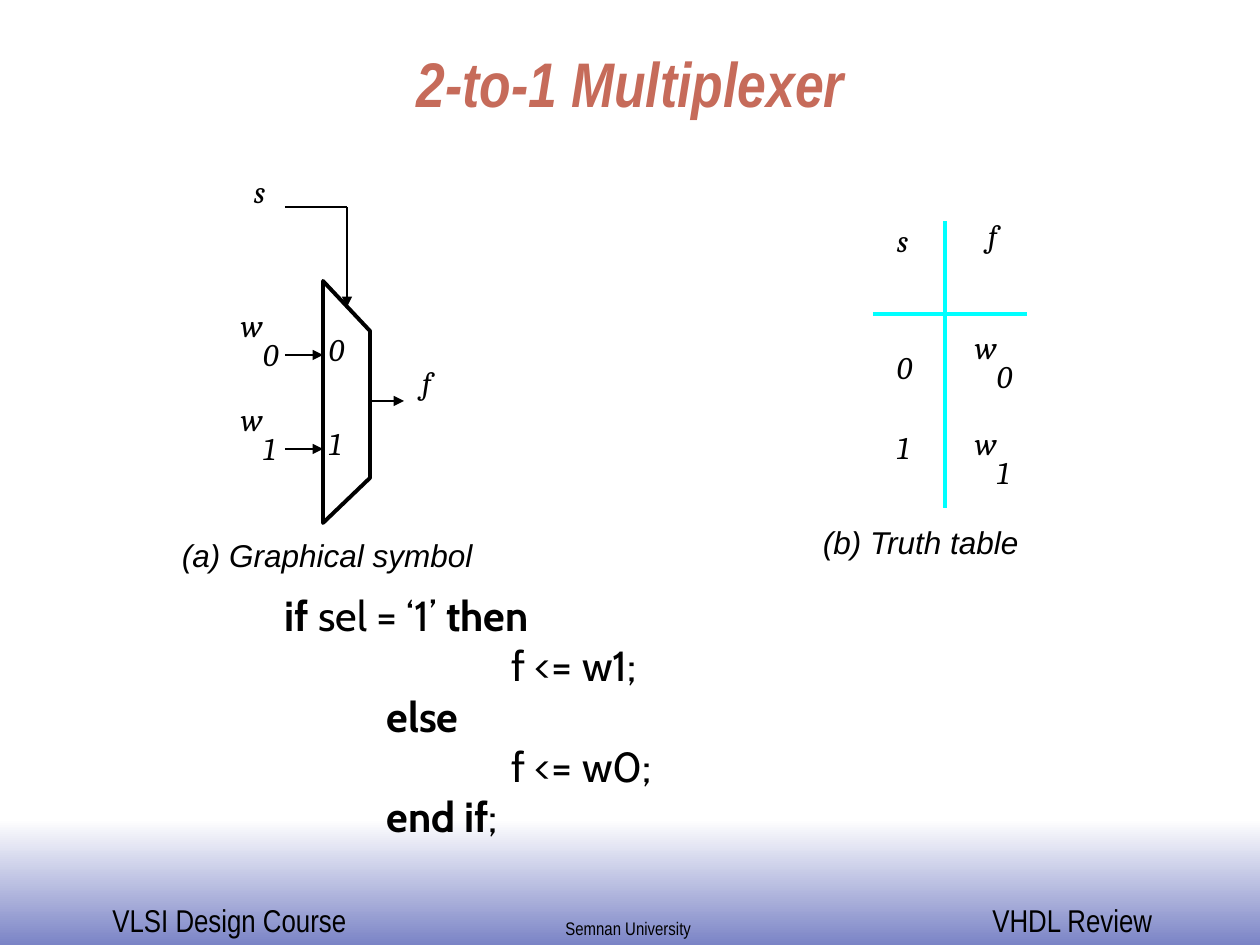
import pptx
import pptx.util
import pptx.dml.color
import pptx.enum.shapes
import pptx.enum.text
import pptx.oxml
import pptx.oxml.ns

SCALE = 914400 / 126  # EMU per px
WIDTHS = {"w": 23, "s": 15, "f": 9, "0": 18, "1": 18}
BLACK, CYAN = "000000", "00FFFF"


def px(n):
    return round(n * SCALE)


def color(code):
    return pptx.dml.color.RGBColor.from_string(code)


def style(run, size, face, code=BLACK, bold=False, italic=False):
    font = run.font
    font.size, font.name = pptx.util.Pt(size), face
    font.bold, font.italic = bold, italic
    font.color.rgb = color(code)


def add_box(slide, x, y, w, h, inset=0, wrap=False):
    box = slide.shapes.add_textbox(px(x), px(y), px(w), px(h))
    frame = box.text_frame
    frame.word_wrap = wrap
    frame.auto_size = pptx.enum.text.MSO_AUTO_SIZE.SHAPE_TO_FIT_TEXT
    frame.margin_left = frame.margin_right = px(inset)
    frame.margin_top = frame.margin_bottom = px(inset / 2)
    return frame


def add_label(slide, text, x, y, w, face, italic=True, inset=0, wrap=False, h=38):
    frame = add_box(slide, x, y, w, h, inset, wrap)
    frame.text = text
    run = frame.paragraphs[0].runs[0]
    style(run, 18, face, italic=italic)
    return run


def add_sign(slide, sign, x, y):
    add_label(slide, sign, x, y, WIDTHS[sign], "Cambria")


def add_input(slide, digit, x, y):
    """The letter w with a lowered digit."""
    add_sign(slide, "w", x, y)
    add_sign(slide, digit, x + 22, y + 29)


def add_line(slide, x1, y1, x2, y2, code=BLACK, width=1.5, arrow=False):
    line = slide.shapes.add_connector(
        pptx.enum.shapes.MSO_CONNECTOR.STRAIGHT, px(x1), px(y1), px(x2), px(y2))
    line.line.color.rgb = color(code)
    line.line.width = pptx.util.Pt(width)
    if arrow:
        tail = pptx.oxml.parse_xml(
            '<a:tailEnd %s type="triangle"/>' % pptx.oxml.ns.nsdecls("a"))
        line.line._get_or_add_ln().append(tail)
    line._element.spPr.append(
        pptx.oxml.parse_xml("<a:effectLst %s/>" % pptx.oxml.ns.nsdecls("a")))


def add_footer(slide):
    band = slide.shapes.add_shape(
        pptx.enum.shapes.MSO_SHAPE.RECTANGLE, 0, px(819), px(1260), px(126))
    band.shadow.inherit = False
    band.line.fill.background()
    band.fill.gradient()
    band.fill.gradient_angle = 270
    for stop, place, code in zip(band.fill.gradient_stops, (0, 1), ("FFFFFF", "7B84C6")):
        stop.position = place
        stop.color.rgb = color(code)
    face = "Arial Narrow"
    add_label(slide, "VLSI Design Course", 100, 895, 260, face, False, 12.6, h=50)
    add_label(slide, "VHDL Review", 980, 895, 186, face, False, 12.6, h=50)
    school = add_label(slide, "Semnan University", 553, 907, 170, face, False, 12.6)
    school._r.get_or_add_rPr().set("baseline", "30000")


def add_title(slide, text):
    title = slide.shapes.title
    title.left, title.top, title.width, title.height = px(53), 0, px(1155), px(126)
    frame = title.text_frame
    frame.text = text
    frame.auto_size = pptx.enum.text.MSO_AUTO_SIZE.NONE
    frame.vertical_anchor = pptx.enum.text.MSO_ANCHOR.BOTTOM
    para = frame.paragraphs[0]
    para.alignment = pptx.enum.text.PP_ALIGN.CENTER
    style(para.runs[0], 36, "Arial Narrow", "C66B5A", True, True)


def add_table(slide):
    """Truth table: a cross of two lines with loose signs."""
    add_line(slide, 873, 314, 1027, 314, CYAN, 2.25)
    add_line(slide, 945, 221, 945, 508, CYAN, 2.25)
    for sign, x, y in (("s", 897, 221), ("f", 988, 216), ("0", 897, 348), ("1", 897, 428)):
        add_sign(slide, sign, x, y)
    for digit, y in (("0", 328), ("1", 424)):
        add_input(slide, digit, 975, y)
    add_label(slide, "(b) Truth table", 823, 523, 204, "Arial", wrap=True)


def add_mux(slide):
    # Select and output wires
    add_line(slide, 285, 207, 347, 207)
    add_line(slide, 347, 207, 347, 307, arrow=True)
    add_line(slide, 370, 401, 404, 401, arrow=True)
    add_sign(slide, "s", 254, 172)
    add_sign(slide, "f", 422, 363)
    # Data inputs
    for digit, y in (("0", 355), ("1", 449)):
        add_line(slide, 285, y, 323, y, arrow=True)
        add_input(slide, digit, 241, y - 49)
        add_sign(slide, digit, 329, y - 25)
    # Body
    form = slide.shapes.build_freeform(370, 478, SCALE)
    form.add_line_segments([(370, 331), (323, 281), (323, 523)], close=True)
    body = form.convert_to_shape()
    body.shadow.inherit = False
    body.fill.background()
    body.line.color.rgb = color(BLACK)
    body.line.width = pptx.util.Pt(2.25)
    add_label(slide, "(a) Graphical symbol", 182, 536, 426, "Arial", wrap=True)


def add_code(slide):
    # Each line: indent in px, then pieces with their weight
    lines = (
        (126, (("if", True), (" sel = ‘1’ ", False), ("then", True))),
        (353, (("f <= w1;", False),)),
        (228, (("else", True),)),
        (353, (("f <= w0;", False),)),
        (228, (("end if", True), (";", False))),
    )
    frame = add_box(slide, 146, 583, 924, 369, 12.6, True)
    for i, (indent, parts) in enumerate(lines):
        para = frame.add_paragraph() if i else frame.paragraphs[0]
        para._p.get_or_add_pPr().set("marL", str(px(indent)))
        for text, bold in parts:
            run = para.add_run()
            run.text = text
            style(run, 24, "Cabin", bold=bold)


def main():
    deck = pptx.Presentation()
    deck.slide_width, deck.slide_height = px(1260), px(945)
    slide = deck.slides.add_slide(deck.slide_layouts[5])
    add_footer(slide)
    add_title(slide, "2-to-1 Multiplexer")
    add_table(slide)
    add_mux(slide)
    add_code(slide)
    deck.save("out.pptx")


if __name__ == "__main__":
    main()
